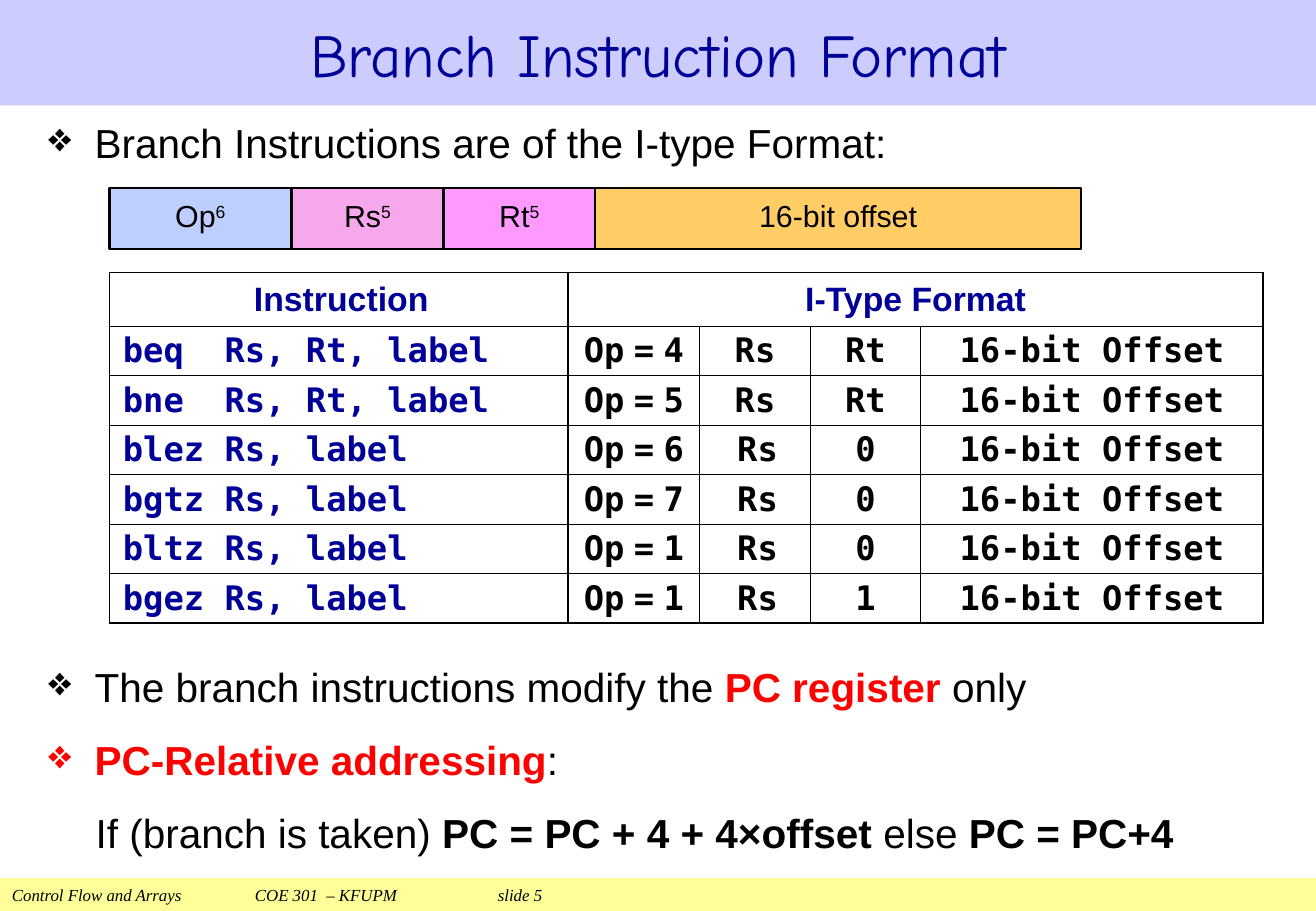
from lxml import etree
from pptx import Presentation
from pptx.dml.color import RGBColor
from pptx.enum.shapes import MSO_SHAPE
from pptx.enum.text import MSO_ANCHOR, PP_ALIGN
from pptx.oxml.ns import qn
from pptx.util import Pt

BLACK = RGBColor(0x00, 0x00, 0x00)
WHITE = RGBColor(0xFF, 0xFF, 0xFF)
NAVY = RGBColor(0x00, 0x00, 0x99)
RED = RGBColor(0xFF, 0x00, 0x00)
LAVENDER = RGBColor(0xCC, 0xCC, 0xFF)
YELLOW = RGBColor(0xFF, 0xFF, 0x99)
BLUE = RGBColor(0xBC, 0xCF, 0xFE)
ROSE = RGBColor(0xF7, 0xA7, 0xEC)
PINK = RGBColor(0xFF, 0x99, 0xFF)
ORANGE = RGBColor(0xFF, 0xCC, 0x66)
MONO = "DejaVu Sans Mono"

SLIDE_WIDTH, SLIDE_HEIGHT = 780, 540
LEFT = 64.8

TITLE = "Branch Instruction Format"
FOOTER = "Control Flow and Arrays\tCOE 301  – KFUPM\tslide 5"
FOOTER_TABS = [144, 288]

BODY = {"size": 24, "name": "Arial", "color": BLACK}
BOLD = {**BODY, "bold": True}
ALERT = {**BOLD, "color": RED}
INTRO = [("Branch Instructions are of the I-type Format:", BODY)]
# bulleted, runs
NOTES = [
    (True, [("The branch instructions modify the ", BODY), ("PC register", ALERT), (" only", BODY)]),
    (True, [("PC-Relative addressing", ALERT), (":", BODY)]),
    (False, [("If (branch is taken) ", BODY), ("PC = PC + 4 + 4×offset", BOLD),
             (" else ", BODY), ("PC = PC+4", BOLD)]),
]

# name, bit count, width, fill
FIELDS = [("Op", "6", 108, BLUE), ("Rs", "5", 90, ROSE), ("Rt", "5", 90, PINK),
          ("16-bit offset", "", 288, ORANGE)]
FIELD = {"size": 18, "name": "Arial", "color": BLACK}

HEADINGS = ["Instruction", "I-Type Format"]
# instruction, opcode, second register
BRANCHES = [
    ("beq  Rs, Rt, label", "4", "Rt"),
    ("bne  Rs, Rt, label", "5", "Rt"),
    ("blez Rs, label", "6", "0"),
    ("bgtz Rs, label", "7", "0"),
    ("bltz Rs, label", "1", "0"),
    ("bgez Rs, label", "1", "1"),
]
COLUMN_WIDTHS = [272, 78, 65.5, 65.5, 203]
HEADING_HEIGHT, ROW_HEIGHT = 32, 29.35
HEADING = {"size": 20, "name": "Arial", "color": NAVY, "bold": True}
CODE = {**HEADING, "name": MONO}
VALUE = {**CODE, "color": BLACK}
GAP = {**VALUE, "name": "Arial"}


def add_runs(para, runs):
    for text, style in runs:
        span = para.add_run()
        span.text = text
        for key, value in style.items():
            if key == "color":
                span.font.color.rgb = value
            elif key == "baseline":
                span._r.get_or_add_rPr().set("baseline", str(value))
            else:
                setattr(span.font, key, Pt(value) if key == "size" else value)


def set_indent(para, bulleted):
    properties = para._p.get_or_add_pPr()
    properties.set("marL", str(Pt(27.4 if bulleted else 28)))
    properties.set("indent", str(Pt(-27.4 if bulleted else 0)))
    if bulleted:
        etree.SubElement(properties, qn("a:buChar")).set("char", "❖")


def add_box(slide, left, top, width, height, fill, runs, align=PP_ALIGN.CENTER, line=None):
    """Add a filled rectangle and return its only paragraph."""
    box = slide.shapes.add_shape(MSO_SHAPE.RECTANGLE, Pt(left), Pt(top), Pt(width), Pt(height))
    box.shadow.inherit = False
    box.fill.solid()
    box.fill.fore_color.rgb = fill
    if line:
        box.line.color.rgb = BLACK
        box.line.width = Pt(line)
    else:
        box.line.fill.background()
    frame = box.text_frame
    frame.word_wrap = True
    frame.vertical_anchor = MSO_ANCHOR.MIDDLE
    para = frame.paragraphs[0]
    para.alignment = align
    add_runs(para, runs)
    return para


def add_text(slide, left, top, width, height, items, **spacing):
    """Add a text box with one paragraph for each (bulleted, runs) item."""
    frame = slide.shapes.add_textbox(Pt(left), Pt(top), Pt(width), Pt(height)).text_frame
    frame.word_wrap = True
    for number, (bulleted, runs) in enumerate(items):
        para = frame.add_paragraph() if number else frame.paragraphs[0]
        for key, value in spacing.items():
            setattr(para, key, value)
        set_indent(para, bulleted)
        add_runs(para, runs)


def fill_cell(cell, runs, align, margins):
    cell.vertical_anchor = MSO_ANCHOR.MIDDLE
    for side, margin in zip(("left", "top", "right", "bottom"), margins):
        setattr(cell, f"margin_{side}", Pt(margin))
    para = cell.text_frame.paragraphs[0]
    para.alignment = align
    add_runs(para, runs)


def draw_borders(cell):
    properties = cell._tc.get_or_add_tcPr()
    for position, side in enumerate(("lnL", "lnR", "lnT", "lnB")):
        line = etree.Element(qn(f"a:{side}"), w=str(Pt(1)))
        solid = etree.SubElement(line, qn("a:solidFill"))
        etree.SubElement(solid, qn("a:srgbClr"), val=str(BLACK))
        properties.insert(position, line)


def add_branch_table(slide):
    height = HEADING_HEIGHT + ROW_HEIGHT * len(BRANCHES)
    table = slide.shapes.add_table(len(BRANCHES) + 1, len(COLUMN_WIDTHS), Pt(LEFT), Pt(161.4),
                                   Pt(sum(COLUMN_WIDTHS)), Pt(height)).table
    table.first_row = table.horz_banding = False
    for column, width in zip(table.columns, COLUMN_WIDTHS):
        column.width = Pt(width)
    for number, row in enumerate(table.rows):
        row.height = Pt(ROW_HEIGHT if number else HEADING_HEIGHT)
    for cell in table.iter_cells():
        cell.fill.solid()
        cell.fill.fore_color.rgb = WHITE
        draw_borders(cell)

    tight, shifted = (1.5,) * 4, (4.5, 1.5, 1.5, 1.5)
    center = PP_ALIGN.CENTER
    table.cell(0, 1).merge(table.cell(0, len(COLUMN_WIDTHS) - 1))
    for column, (heading, margins) in enumerate(zip(HEADINGS, (shifted, tight))):
        fill_cell(table.cell(0, column), [(heading, HEADING)], center, margins)
    for number, (instruction, opcode, second) in enumerate(BRANCHES, 1):
        equation = [("Op", VALUE), (" ", GAP), ("=", VALUE), (" ", GAP), (opcode, VALUE)]
        cells = [
            ([(instruction, CODE)], PP_ALIGN.LEFT, (8, 0.7, 8, 0.7)),
            (equation, center, (4.5, 0, 4.5, 0)),
            ([("Rs", VALUE)], center, tight if second == "Rt" else shifted),
            ([(second, VALUE)], center, tight),
            ([("16-bit Offset", VALUE)], center, tight),
        ]
        for column, content in enumerate(cells):
            fill_cell(table.cell(number, column), *content)


def main():
    deck = Presentation()
    deck.slide_width, deck.slide_height = Pt(SLIDE_WIDTH), Pt(SLIDE_HEIGHT)
    slide = deck.slides.add_slide(deck.slide_layouts[6])

    footer_style = {"size": 10, "name": "Times New Roman", "color": BLACK, "italic": True}
    footer = add_box(slide, 0, 520.6, SLIDE_WIDTH, 19.4, YELLOW, [(FOOTER, footer_style)],
                     PP_ALIGN.LEFT)
    tabs = etree.SubElement(footer._p.get_or_add_pPr(), qn("a:tabLst"))
    for position in FOOTER_TABS:
        etree.SubElement(tabs, qn("a:tab"), pos=str(Pt(position)), algn="l")

    title_style = {"size": 36, "name": "Comic Neue", "color": NAVY}
    add_box(slide, 0, 0, SLIDE_WIDTH, 62.6, LAVENDER, [(TITLE, title_style)])
    add_text(slide, 21.6, 374.4, 742, 140.4, NOTES, line_spacing=1.5)
    add_text(slide, 21.6, 66.2, 742, 49.7, [(True, INTRO)], space_before=Pt(3))

    left = LEFT
    for name, bits, width, fill in FIELDS:
        runs = [(name, FIELD)]
        if bits:
            runs.append((bits, {**FIELD, "baseline": 30000}))
        para = add_box(slide, left, 111.6, width, 36, fill, runs, line=1.5)
        para.line_spacing = 0.85
        left += width

    add_branch_table(slide)
    deck.save("out.pptx")


if __name__ == "__main__":
    main()
